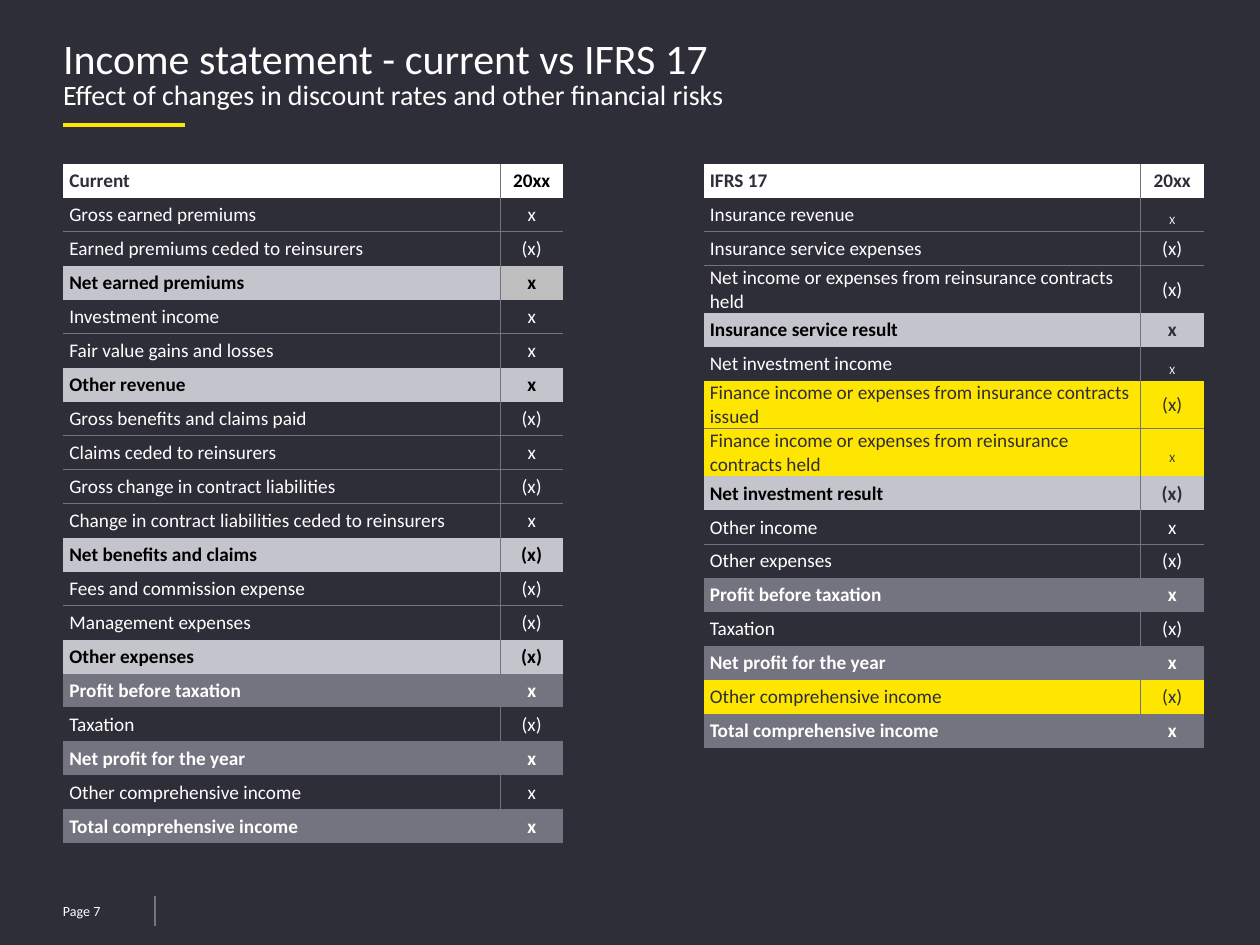
from pptx import Presentation
from pptx.dml.color import RGBColor
from pptx.enum.shapes import MSO_CONNECTOR
from pptx.enum.text import MSO_ANCHOR, MSO_AUTO_SIZE, PP_ALIGN
from pptx.oxml.ns import qn
from pptx.util import Pt
from lxml import etree

LINE = MSO_CONNECTOR.STRAIGHT
TOP, MIDDLE = MSO_ANCHOR.TOP, MSO_ANCHOR.MIDDLE
LEFT, CENTER = PP_ALIGN.LEFT, PP_ALIGN.CENTER
FIXED = MSO_AUTO_SIZE.NONE

DARK = RGBColor(0x2E, 0x2E, 0x38)
WHITE = RGBColor(0xFF, 0xFF, 0xFF)
BLACK = RGBColor(0, 0, 0)
YELLOW = RGBColor(0xFF, 0xE6, 0x00)
GREY = RGBColor(0x74, 0x74, 0x80)
PALE = RGBColor(0xC4, 0xC4, 0xCD)
SILVER = RGBColor(0xBF, 0xBF, 0xBF)

FONT = "Calibri"
EDGE = 36
ROW = 19.44
COLS = (249.84, 36)

# kind: fill, label colour, value colour, bold
KINDS = {
    "head": (WHITE, DARK, DARK, True),
    "plain": (None, WHITE, WHITE, False),
    "sub": (PALE, BLACK, BLACK, True),
    "total": (GREY, WHITE, WHITE, True),
    "mark": (YELLOW, DARK, DARK, False),
}

CURRENT = [
    ("Current", "20xx", "head"),
    ("Gross earned premiums", "x", "plain"),
    ("Earned premiums ceded to reinsurers", "(x)", "plain"),
    ("Net earned premiums", "x", "sub"),
    ("Investment income", "x", "plain"),
    ("Fair value gains and losses", "x", "plain"),
    ("Other revenue", "x", "sub"),
    ("Gross benefits and claims paid", "(x)", "plain"),
    ("Claims ceded to reinsurers", "x", "plain"),
    ("Gross change in contract liabilities", "(x)", "plain"),
    ("Change in contract liabilities ceded to reinsurers", "x", "plain"),
    ("Net benefits and claims", "(x)", "sub"),
    ("Fees and commission expense", "(x)", "plain"),
    ("Management expenses", "(x)", "plain"),
    ("Other expenses", "(x)", "sub"),
    ("Profit before taxation", "x", "total"),
    ("Taxation", "(x)", "plain"),
    ("Net profit for the year", "x", "total"),
    ("Other comprehensive income", "x", "plain"),
    ("Total comprehensive income", "x", "total"),
]

IFRS = [
    ("IFRS 17", "20xx", "head"),
    ("Insurance revenue", "X", "plain"),
    ("Insurance service expenses", "(x)", "plain"),
    ("Net income or expenses from reinsurance contracts held", "(x)", "plain"),
    ("Insurance service result", "x", "sub"),
    ("Net investment income", "X", "plain"),
    ("Finance income or expenses from insurance contracts issued", "(x)", "mark"),
    ("Finance income or expenses from reinsurance contracts held", "X", "mark"),
    ("Net investment result", "(x)", "sub"),
    ("Other income", "x", "plain"),
    ("Other expenses", "(x)", "plain"),
    ("Profit before taxation", "x", "total"),
    ("Taxation", "(x)", "plain"),
    ("Net profit for the year", "x", "total"),
    ("Other comprehensive income", "(x)", "mark"),
    ("Total comprehensive income", "x", "total"),
]


def style(para, size, color, bold=False):
    for run in para.runs:
        font = run.font
        font.name, font.size, font.bold = FONT, Pt(size), bold
        font.color.rgb = color


def clear(frame, anchor):
    frame.margin_left = frame.margin_right = 0
    frame.margin_top = frame.margin_bottom = 0
    frame.word_wrap = True
    frame.auto_size = FIXED
    frame.vertical_anchor = anchor


def place(shape, x, y, w, h):
    shape.left, shape.top = Pt(x), Pt(y)
    shape.width, shape.height = Pt(w), Pt(h)


def add_title(slide, lines):
    title = slide.shapes.title
    place(title, EDGE, 23, 648, 46.8)
    frame = title.text_frame
    clear(frame, TOP)
    frame.text = "\n".join(text for text, size in lines)
    for para, (text, size) in zip(frame.paragraphs, lines):
        para.alignment = LEFT
        para.line_spacing = 0.85
        style(para, size, WHITE)


def add_line(slide, x1, y1, x2, y2, color, width):
    line = slide.shapes.add_connector(LINE, Pt(x1), Pt(y1), Pt(x2), Pt(y2))
    line.line.color.rgb = color
    line.line.width = Pt(width)
    props = line._element.find(qn("p:spPr"))
    etree.SubElement(props, qn("a:effectLst"))


def add_page(slide, text):
    box = slide.shapes.add_textbox(Pt(EDGE), Pt(513.4), Pt(52.5), Pt(14.4))
    clear(box.text_frame, MIDDLE)
    box.text_frame.text = text
    style(box.text_frame.paragraphs[0], 8, WHITE)


def set_edges(cell, sides):
    props = cell._tc.get_or_add_tcPr()
    for side in "LRTB":
        edge = etree.SubElement(props, qn("a:ln" + side), w=str(Pt(0.5)))
        if side in sides:
            fill = etree.SubElement(edge, qn("a:solidFill"))
            etree.SubElement(fill, qn("a:srgbClr"), val=str(GREY))
        else:
            etree.SubElement(edge, qn("a:noFill"))


def set_cell(cell, text, fill, color, bold, align, inset, sides):
    set_edges(cell, sides)
    if fill is None:
        cell.fill.background()
    else:
        cell.fill.solid()
        cell.fill.fore_color.rgb = fill
    cell.margin_left = Pt(inset)
    cell.margin_right = cell.margin_top = cell.margin_bottom = 0
    cell.vertical_anchor = MIDDLE
    cell.text_frame.text = text
    para = cell.text_frame.paragraphs[0]
    para.alignment = align
    style(para, 11, color, bold)
    if text == "X":
        para.runs[0].font._element.set("baseline", "-25000")


def add_grid(slide, x, rows):
    shape = slide.shapes.add_table(len(rows), 2, Pt(x), Pt(93.6),
                                   Pt(sum(COLS)), Pt(ROW * len(rows)))
    table = shape.table
    table.first_row = table.horz_banding = False
    for col, width in zip(table.columns, COLS):
        col.width = Pt(width)
    kinds = [None] + [kind for label, value, kind in rows] + [None]
    for i, (label, value, kind) in enumerate(rows):
        table.rows[i].height = Pt(ROW)
        fill, ink, tone, bold = KINDS[kind]
        sides = "T" * (kinds[i] == kind) + "B" * (kinds[i + 2] == kind)
        set_cell(table.cell(i, 0), label, fill, ink, bold, LEFT, 3.6, sides + "R")
        set_cell(table.cell(i, 1), value, fill, tone, bold, CENTER, 0, sides + "L")
    return table


def tint(table, row, color):
    style(table.cell(row, 1).text_frame.paragraphs[0], 11, color, True)


def main():
    deck = Presentation()
    deck.slide_width, deck.slide_height = Pt(720), Pt(540)
    slide = deck.slides.add_slide(deck.slide_layouts[5])
    slide.background.fill.solid()
    slide.background.fill.fore_color.rgb = DARK

    add_line(slide, EDGE, 71.3, 105.8, 71.3, YELLOW, 2.25)
    add_title(slide, [
        ("Income statement - current vs IFRS 17", 24),
        ("Effect of changes in discount rates and other financial risks", 16),
    ])
    add_page(slide, "Page 7")
    add_line(slide, 88.5, 512, 88.5, 529, GREY, 0.75)

    old = add_grid(slide, EDGE, CURRENT)
    tint(old, 0, BLACK)
    old.cell(3, 1).fill.fore_color.rgb = SILVER
    new = add_grid(slide, 402, IFRS)
    for row in (4, 8):
        tint(new, row, DARK)

    deck.save("out.pptx")


if __name__ == "__main__":
    main()
